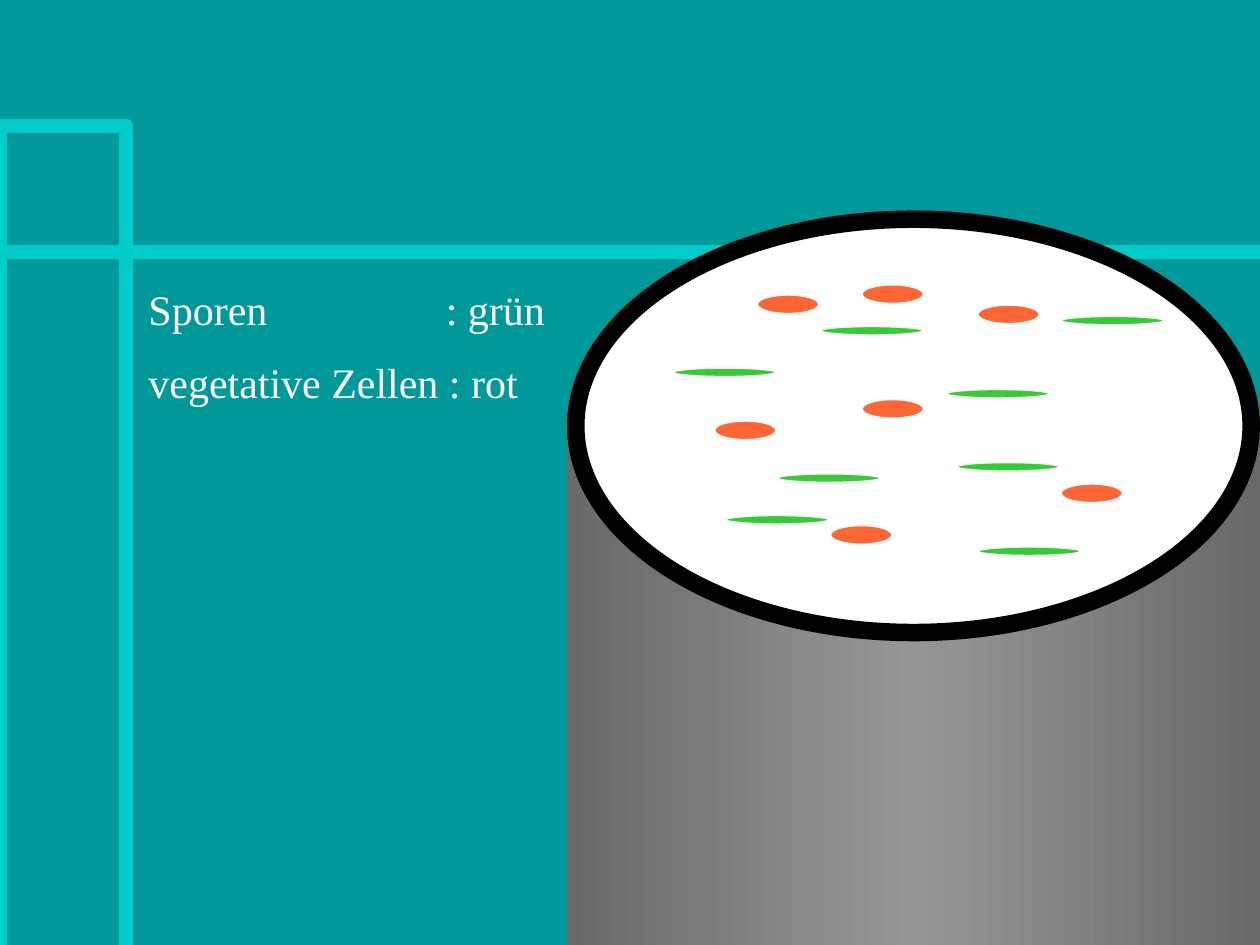
from copy import deepcopy

from lxml import etree
from pptx import Presentation
from pptx.dml.color import RGBColor
from pptx.enum import shapes, text
from pptx.oxml.ns import qn
from pptx.util import Inches, Pt

TEAL = RGBColor(0x00, 0x99, 0x99)
CYAN = RGBColor(0x00, 0xCC, 0xCC)
DARK_GRAY = RGBColor(0x69, 0x69, 0x69)
LIGHT_GRAY = RGBColor(0x96, 0x96, 0x96)
WHITE = RGBColor(0xFF, 0xFF, 0xFF)
BLACK = RGBColor(0x00, 0x00, 0x00)
ORANGE = RGBColor(0xFF, 0x66, 0x33)
GREEN = RGBColor(0x33, 0xCC, 0x33)

FRAME_LINES = [
    [(10.02, 1.86), (0.42, 1.86), (0.42, 7.5)],
    [(1.17, 7.5), (1.17, 0.68), (0.42, 0.68), (0.42, 1.52), (10.02, 1.52)],
]
# Colour, size and top left corners of each kind of cell
CELLS = [
    (ORANGE, (0.49, 0.15), [(6.01, 2.34), (6.84, 2.26), (6.84, 3.17), (5.67, 3.34),
                            (6.59, 4.17), (8.42, 3.84), (7.76, 2.42)]),
    (GREEN, (0.82, 0.07), [(5.34, 2.92), (6.51, 2.59), (6.17, 3.76), (5.76, 4.09),
                           (7.59, 3.67), (7.76, 4.34), (8.42, 2.51), (7.51, 3.09)]),
]
LEGEND = ["Sporen\t: grün", "vegetative Zellen : rot"]
COLON_TAB = 2.36


def add_frame_line(slide, points):
    builder = slide.shapes.build_freeform(*points[0], scale=Inches(1))
    builder.add_line_segments(points[1:], close=False)
    shape = builder.convert_to_shape()
    shape.shadow.inherit = False
    shape.fill.background()
    shape.line.color.rgb = CYAN
    shape.line.width = Pt(8)


def add_ellipse(slide, box, fill, line, width):
    shape = slide.shapes.add_shape(shapes.MSO_SHAPE.OVAL, *map(Inches, box))
    shape.shadow.inherit = False
    shape.fill.solid()
    shape.fill.fore_color.rgb = fill
    shape.line.color.rgb = line
    shape.line.width = Pt(width)


def add_cylinder_side(slide):
    """Add the rectangle that is light in the middle and dark at both sides."""
    box = map(Inches, (4.5, 3.25, 5.5, 4.25))
    shape = slide.shapes.add_shape(shapes.MSO_SHAPE.RECTANGLE, *box)
    shape.shadow.inherit = False
    shape.line.fill.background()
    shape.fill.gradient()
    shape.fill.gradient_angle = 0
    first, last = shape.fill.gradient_stops
    first.color.rgb = last.color.rgb = DARK_GRAY
    first.position, last.position = 0, 1
    stop_list = shape._element.spPr.find(qn("a:gradFill")).find(qn("a:gsLst"))
    stop_list.insert(1, deepcopy(stop_list[0]))
    middle = shape.fill.gradient_stops[1]
    middle.color.rgb = LIGHT_GRAY
    middle.position = 0.5


def add_legend(slide):
    box = slide.shapes.add_textbox(*map(Inches, (1.08, 2.17, 3.58, 1.1)))
    frame = box.text_frame
    frame.word_wrap = True
    frame.vertical_anchor = text.MSO_ANCHOR.TOP
    frame.margin_top = Inches(0.08)
    frame.text = "\n".join(LEGEND)
    for index, paragraph in enumerate(frame.paragraphs):
        paragraph.space_before = Pt(13 if index else 0)
        tabs = etree.SubElement(paragraph._p.get_or_add_pPr(), qn("a:tabLst"))
        etree.SubElement(tabs, qn("a:tab"), pos=str(Inches(COLON_TAB)), algn="l")
        for run in paragraph.runs:
            run.font.name = "Times New Roman"
            run.font.size = Pt(24)
            run.font.color.rgb = WHITE


def main():
    presentation = Presentation()
    presentation.slide_width, presentation.slide_height = Inches(10), Inches(7.5)
    slide = presentation.slides.add_slide(presentation.slide_layouts[6])
    slide.background.fill.solid()
    slide.background.fill.fore_color.rgb = TEAL

    for points in FRAME_LINES:
        add_frame_line(slide, points)
    add_cylinder_side(slide)
    add_ellipse(slide, (4.57, 1.74, 5.36, 3.28), WHITE, BLACK, 10)
    for color, size, corners in CELLS:
        for corner in corners:
            add_ellipse(slide, corner + size, color, WHITE, 1)
    add_legend(slide)
    presentation.save("out.pptx")


if __name__ == "__main__":
    main()
